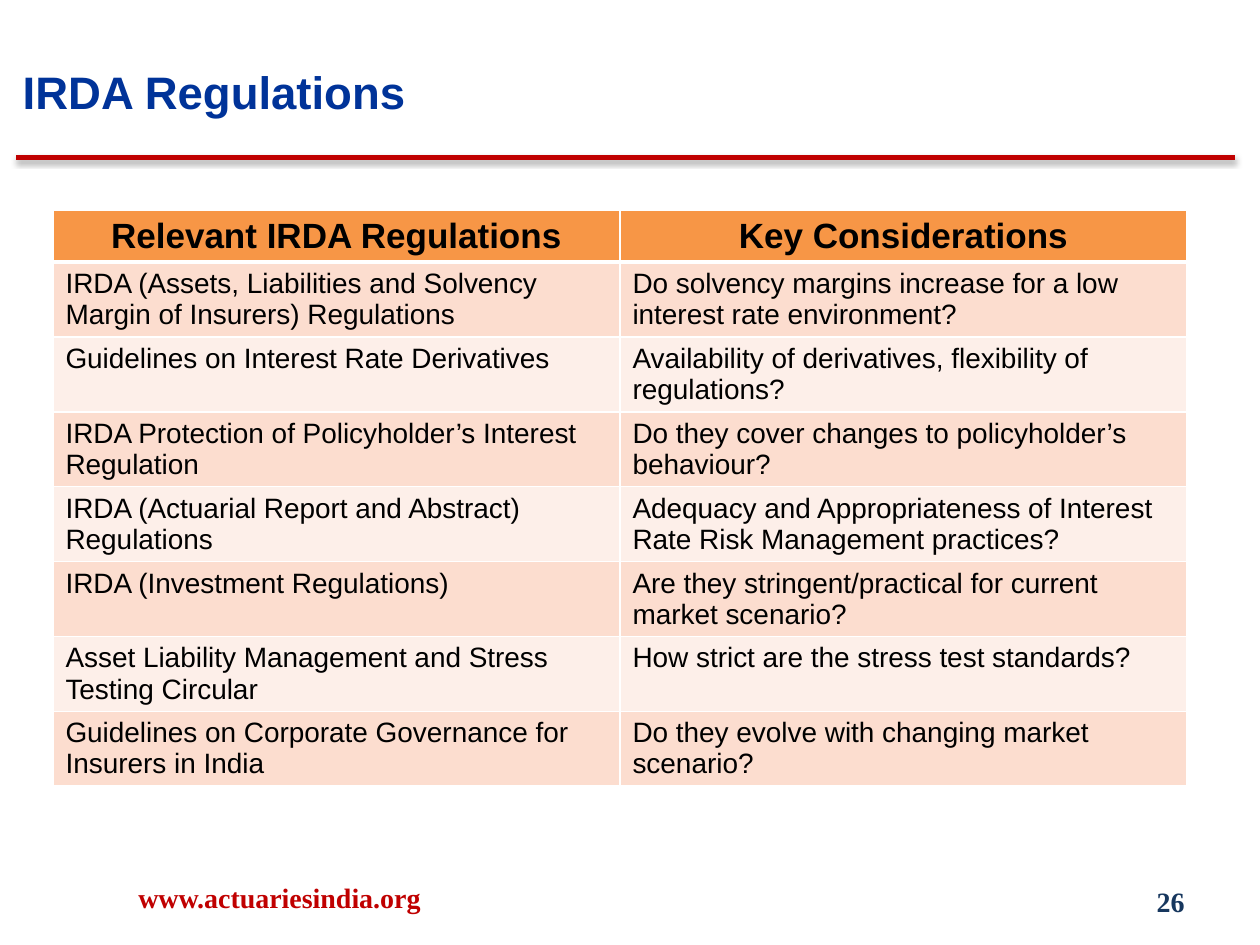
from dataclasses import dataclass

from lxml.etree import SubElement
from pptx import Presentation
from pptx.dml.color import RGBColor
from pptx.enum.shapes import MSO_CONNECTOR
from pptx.enum.text import MSO_ANCHOR, MSO_AUTO_SIZE, PP_ALIGN
from pptx.oxml import parse_xml
from pptx.oxml.ns import nsdecls, qn
from pptx.util import Inches, Pt


@dataclass(frozen=True)
class Theme:
    sans: str = "Arial"
    serif: str = "Times New Roman"
    blue: str = "003399"
    navy: str = "17375E"
    red: str = "C00000"
    black: str = "000000"
    white: str = "FFFFFF"
    head: str = "F79646"
    bands: tuple = ("FCDDCF", "FDEFE9")
    title: int = 26
    label: int = 20
    text: int = 16


THEME = Theme()

ROWS = [
    ("Relevant IRDA Regulations", "Key Considerations"),
    ("IRDA (Assets, Liabilities and Solvency Margin of Insurers) Regulations",
     "Do solvency margins increase for a low interest rate environment?"),
    ("Guidelines on Interest Rate Derivatives",
     "Availability of derivatives, flexibility of regulations?"),
    ("IRDA Protection of Policyholder’s Interest Regulation",
     "Do they cover changes to policyholder’s behaviour?"),
    ("IRDA (Actuarial Report and Abstract) Regulations",
     "Adequacy and Appropriateness of Interest Rate Risk Management practices?"),
    ("IRDA (Investment Regulations)",
     "Are they stringent/practical for current market scenario?"),
    ("Asset Liability Management and Stress Testing Circular",
     "How strict are the stress test standards?"),
    ("Guidelines on Corporate Governance for Insurers in India",
     "Do they evolve with changing market scenario?"),
]


def write(frame, text, face, size, color, bold=True, align=PP_ALIGN.LEFT):
    frame.text = text
    line = frame.paragraphs[0]
    line.alignment = align
    for run in line.runs:
        font = run.font
        font.name, font.size, font.bold = face, Pt(size), bold
        font.color.rgb = RGBColor.from_string(color)


def add_title(slide, left, top, width, height):
    shape = slide.shapes.title
    shape.left, shape.top = Inches(left), Inches(top)
    shape.width, shape.height = Inches(width), Inches(height)
    frame = shape.text_frame
    write(frame, "IRDA Regulations", THEME.sans, THEME.title, THEME.blue)
    frame.auto_size = MSO_AUTO_SIZE.NONE
    frame.vertical_anchor = MSO_ANCHOR.TOP


def add_rule(slide, left, top, width):
    rule = slide.shapes.add_connector(
        MSO_CONNECTOR.STRAIGHT, Inches(left), Inches(top),
        Inches(left + width), Inches(top))
    rule.line.color.rgb = RGBColor.from_string(THEME.red)
    rule.line.width = Pt(3)
    rule._element.spPr.append(parse_xml(
        f'<a:effectLst {nsdecls("a")}>'
        f'<a:outerShdw blurRad="{Pt(3.1)}" dist="{Pt(1.6)}" dir="5400000" rotWithShape="0">'
        f'<a:srgbClr val="{THEME.black}"><a:alpha val="38000"/></a:srgbClr>'
        '</a:outerShdw></a:effectLst>'))


def add_edges(cell, top, base):
    props = cell._tc.get_or_add_tcPr()
    sides = {"lnL": 1, "lnR": 1, "lnT": top, "lnB": base}
    for spot, (side, width) in enumerate(sides.items()):
        edge = SubElement(props, qn(f"a:{side}"), w=str(Pt(width)))
        fill = SubElement(edge, qn("a:solidFill"))
        SubElement(fill, qn("a:srgbClr"), val=THEME.white)
        props.insert(spot, edge)


def add_grid(slide, left, top, width, height):
    count, span = len(ROWS), len(ROWS[0])
    first = 0.4
    table = slide.shapes.add_table(
        count, span, Inches(left), Inches(top), Inches(width), Inches(height)).table
    table.horz_banding = False
    for column in table.columns:
        column.width = Inches(width / span)
    for r, texts in enumerate(ROWS):
        head = r == 0
        table.rows[r].height = Inches(first if head else (height - first) / (count - 1))
        shade = THEME.head if head else THEME.bands[(r - 1) % 2]
        for c, text in enumerate(texts):
            cell = table.cell(r, c)
            cell.fill.solid()
            cell.fill.fore_color.rgb = RGBColor.from_string(shade)
            cell.vertical_anchor = MSO_ANCHOR.MIDDLE if head else MSO_ANCHOR.TOP
            write(cell.text_frame, text, THEME.sans,
                  THEME.label if head else THEME.text, THEME.black, head,
                  PP_ALIGN.CENTER if head else PP_ALIGN.LEFT)
            add_edges(cell, 3 if r == 1 else 1, 3 if head else 1)


def add_note(slide, text, color, align, left, top, width, height):
    box = slide.shapes.add_textbox(
        Inches(left), Inches(top), Inches(width), Inches(height))
    frame = box.text_frame
    frame.word_wrap = True
    frame.vertical_anchor = MSO_ANCHOR.MIDDLE
    write(frame, text, THEME.serif, THEME.text, color, align=align)


def main():
    deck = Presentation()
    deck.slide_width, deck.slide_height = Inches(10), Inches(7.5)
    slide = deck.slides.add_slide(deck.slide_layouts[5])
    add_rule(slide, 0.13, 1.25, 9.67)
    add_title(slide, 0.08, 0.46, 8.42, 0.67)
    add_grid(slide, 0.42, 1.67, 9, 4.56)
    add_note(slide, "www.actuariesindia.org", THEME.red, PP_ALIGN.LEFT,
             1, 6.92, 3.17, 0.4)
    add_note(slide, "26", THEME.navy, PP_ALIGN.RIGHT, 7.17, 6.95, 2.33, 0.4)
    deck.save("out.pptx")


if __name__ == "__main__":
    main()
